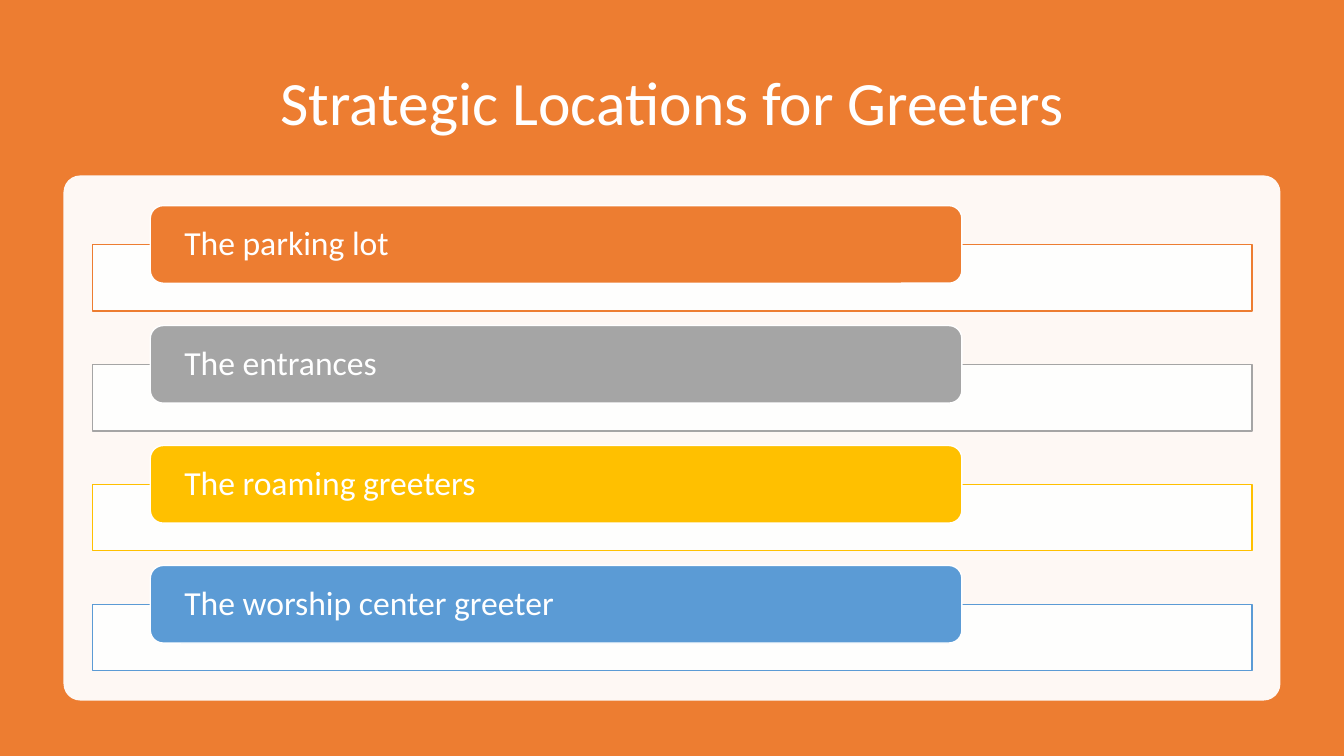
from lxml.etree import SubElement
from pptx import Presentation
from pptx.dml.color import RGBColor
from pptx.enum.shapes import MSO_SHAPE
from pptx.enum.text import MSO_ANCHOR, PP_ALIGN
from pptx.oxml.ns import qn
from pptx.util import Inches, Pt

WHITE = RGBColor(0xFF, 0xFF, 0xFF)
ORANGE = RGBColor(0xED, 0x7D, 0x31)
GRAY = RGBColor(0xA5, 0xA5, 0xA5)
GOLD = RGBColor(0xFF, 0xC0, 0x00)
BLUE = RGBColor(0x5B, 0x9B, 0xD5)

TITLE = "Strategic Locations for Greeters"
LOCATIONS = [
    ("The parking lot", ORANGE),
    ("The entrances", GRAY),
    ("The roaming greeters", GOLD),
    ("The worship center greeter", BLUE),
]

SLIDE_WIDTH, SLIDE_HEIGHT = 13.33, 7.5
MARGIN, CONTENT_WIDTH = 0.92, 11.5
FIRST_LABEL_TOP, ROW_PITCH = 2.04, 1.19
LABEL_LEFT, LABEL_WIDTH, LABEL_HEIGHT = 1.49, 8.05, 0.77
BAR_HEIGHT = 0.66
LABEL_INSET = 0.34


def add_panel(slide, kind, left, top, width, height, fill, opacity=100, line=None):
    panel = slide.shapes.add_shape(
        kind, Inches(left), Inches(top), Inches(width), Inches(height))
    panel.shadow.inherit = False
    panel.fill.solid()
    panel.fill.fore_color.rgb = fill
    if opacity < 100:
        color = panel.element.spPr.find(qn("a:solidFill"))[0]
        SubElement(color, qn("a:alpha"), val=str(opacity * 1000))
    if line is None:
        panel.line.fill.background()
    else:
        panel.line.color.rgb = line
        panel.line.width = Pt(1)
    return panel


def write_text(shape, text, size, align, inset=0.1):
    frame = shape.text_frame
    frame.word_wrap = True
    frame.vertical_anchor = MSO_ANCHOR.MIDDLE
    frame.margin_left = frame.margin_right = Inches(inset)
    para = frame.paragraphs[0]
    para.alignment = align
    para.line_spacing = 0.9
    span = para.add_run()
    span.text = text
    span.font.name = "Calibri"
    span.font.size = Pt(size)
    span.font.color.rgb = WHITE


def main():
    deck = Presentation()
    deck.slide_width, deck.slide_height = Inches(SLIDE_WIDTH), Inches(SLIDE_HEIGHT)
    slide = deck.slides.add_slide(deck.slide_layouts[5])

    title = slide.shapes.title
    title.left, title.top = Inches(MARGIN), Inches(0.5)
    title.width, title.height = Inches(CONTENT_WIDTH), Inches(1.1)
    write_text(title, TITLE, 44, PP_ALIGN.CENTER)

    backdrop = add_panel(
        slide, MSO_SHAPE.RECTANGLE, 0, 0, SLIDE_WIDTH, SLIDE_HEIGHT, ORANGE)
    title.element.addprevious(backdrop.element)

    card = add_panel(
        slide, MSO_SHAPE.ROUNDED_RECTANGLE, 0.63, 1.74, 12.07, 5.21, WHITE, opacity=95)
    card.adjustments[0] = 0.032

    for row, (location, color) in enumerate(LOCATIONS):
        label_top = FIRST_LABEL_TOP + row * ROW_PITCH
        add_panel(slide, MSO_SHAPE.RECTANGLE, MARGIN, label_top + LABEL_HEIGHT / 2,
                  CONTENT_WIDTH, BAR_HEIGHT, WHITE, opacity=90, line=color)
        label = add_panel(slide, MSO_SHAPE.ROUNDED_RECTANGLE, LABEL_LEFT, label_top,
                          LABEL_WIDTH, LABEL_HEIGHT, color, line=WHITE)
        write_text(label, location, 24, PP_ALIGN.LEFT, inset=LABEL_INSET - 0.04)

    deck.save("out.pptx")


if __name__ == "__main__":
    main()
